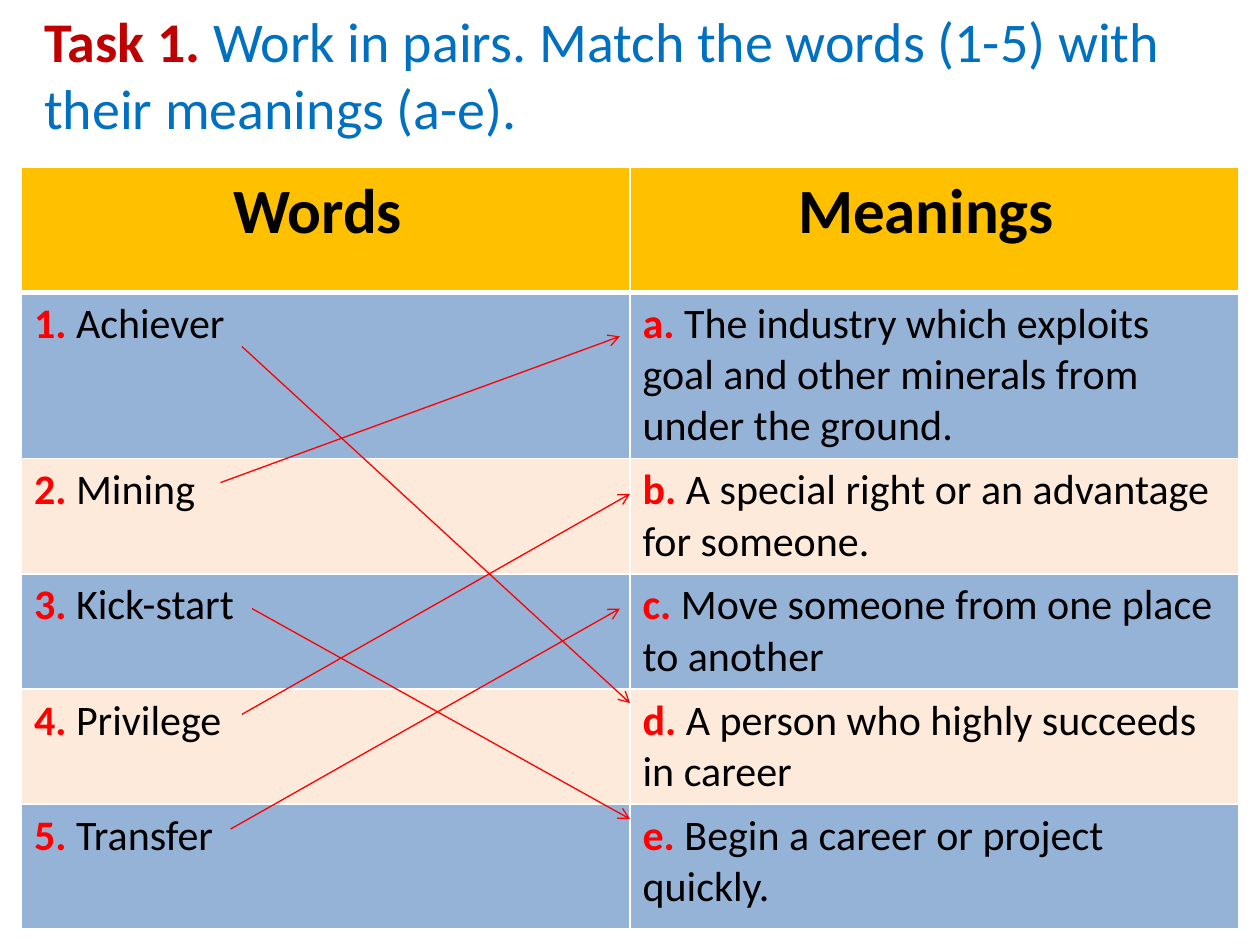
from lxml import etree
from pptx import Presentation
from pptx.dml.color import RGBColor
from pptx.enum.shapes import MSO_CONNECTOR
from pptx.enum.text import MSO_ANCHOR, MSO_AUTO_SIZE, PP_ALIGN
from pptx.oxml.ns import qn
from pptx.util import Inches, Pt

STRAIGHT = MSO_CONNECTOR.STRAIGHT
TOP = MSO_ANCHOR.TOP
NO_AUTOFIT = MSO_AUTO_SIZE.NONE
LEFT, CENTER = PP_ALIGN.LEFT, PP_ALIGN.CENTER

DARK_RED = RGBColor(0xC0, 0x00, 0x00)
BLUE = RGBColor(0x00, 0x70, 0xC0)
RED = RGBColor(0xFF, 0x00, 0x00)
BLACK = RGBColor(0x00, 0x00, 0x00)
WHITE = RGBColor(0xFF, 0xFF, 0xFF)
GOLD = RGBColor(0xFF, 0xC0, 0x00)
BAND_FILLS = (RGBColor(0x95, 0xB3, 0xD7), RGBColor(0xFD, 0xEA, 0xDA))

FONT = "Calibri"
HEADINGS = ("Words", "Meanings")
WORDS = ("Achiever", "Mining", "Kick-start", "Privilege", "Transfer")
MEANINGS = (
    "The industry which exploits goal and other minerals from under the ground.",
    "A special right or an advantage for someone.",
    "Move someone from one place to another",
    "A person who highly succeeds in career",
    "Begin a career or project quickly.",
)
ROW_HEIGHTS = (0.99, 1.3, 0.9, 0.9, 0.91, 0.99)
MATCHES = (
    ((1.75, 1.42), (4.83, 4.25)),
    ((1.58, 2.5), (4.75, 1.34)),
    ((1.83, 3.5), (4.83, 5.17)),
    ((1.75, 4.34), (4.83, 2.59)),
    ((1.66, 5.25), (4.75, 3.5)),
)


def add_span(para, text, color, size, bold=False):
    """Append a formatted run to a paragraph."""
    span = para.add_run()
    span.text = text
    formats = {"name": FONT, "size": Pt(size), "bold": bold}
    for name, value in formats.items():
        setattr(span.font, name, value)
    span.font.color.rgb = color


def add_heading(page, left, top, width, height):
    """Fill the title placeholder with the task instruction."""
    title = page.shapes.title
    box = {"left": left, "top": top, "width": width, "height": height}
    for name, value in box.items():
        setattr(title, name, Inches(value))
    frame = title.text_frame
    formats = {"word_wrap": True, "auto_size": NO_AUTOFIT, "vertical_anchor": TOP}
    for name, value in formats.items():
        setattr(frame, name, value)
    para = frame.paragraphs[0]
    para.alignment = LEFT
    add_span(para, "Task 1. ", DARK_RED, 32, True)
    add_span(para, "Work in pairs. Match the words (1-5) with their meanings (a-e).", BLUE, 32)


def style_cell(cell, fill, top_width, bottom_width):
    """Give a cell white borders and a solid fill."""
    properties = cell._tc.get_or_add_tcPr()
    widths = {"a:lnL": 1, "a:lnR": 1, "a:lnT": top_width, "a:lnB": bottom_width}
    for tag, width in widths.items():
        line = etree.SubElement(properties, qn(tag), w=str(Pt(width)))
        solid = etree.SubElement(line, qn("a:solidFill"))
        etree.SubElement(solid, qn("a:srgbClr"), val=str(WHITE))
    cell.fill.solid()
    cell.fill.fore_color.rgb = fill


def add_match_table(page, left, top, width, height):
    """Add the table of words and meanings."""
    frame = page.shapes.add_table(
        len(ROW_HEIGHTS), len(HEADINGS),
        Inches(left), Inches(top), Inches(width), Inches(height))
    table = frame.table
    for column in table.columns:
        column.width = Inches(width / len(HEADINGS))
    for row, row_height in zip(table.rows, ROW_HEIGHTS):
        row.height = Inches(row_height)
    for column, heading in enumerate(HEADINGS):
        cell = table.cell(0, column)
        style_cell(cell, GOLD, 1, 3)
        cell.margin_right = Inches(0.23)
        para = cell.text_frame.paragraphs[0]
        para.alignment = CENTER
        add_span(para, heading, BLACK, 36, True)
    for row, entries in enumerate(zip(WORDS, MEANINGS), start=1):
        labels = (f"{row}. ", f"{'abcde'[row - 1]}. ")
        for column, (label, entry) in enumerate(zip(labels, entries)):
            cell = table.cell(row, column)
            style_cell(cell, BAND_FILLS[(row - 1) % 2], 3 if row == 1 else 1, 1)
            para = cell.text_frame.paragraphs[0]
            add_span(para, label, RED, 24, True)
            add_span(para, entry, BLACK, 24)


def add_match_arrows(page, left, top):
    """Draw an arrow from each word to its meaning."""
    for (start_x, start_y), (end_x, end_y) in MATCHES:
        arrow = page.shapes.add_connector(
            STRAIGHT, Inches(left + start_x), Inches(top + start_y),
            Inches(left + end_x), Inches(top + end_y))
        arrow.line.color.rgb = RED
        arrow.line.width = Pt(0.75)
        etree.SubElement(arrow.line._get_or_add_ln(), qn("a:tailEnd"), type="arrow")
        etree.SubElement(arrow._element.spPr, qn("a:effectLst"))


def main():
    """Build and save the matching exercise."""
    deck = Presentation()
    deck.slide_width, deck.slide_height = Inches(10), Inches(7.5)
    page = deck.slides.add_slide(deck.slide_layouts[5])
    add_heading(page, 0.25, 0, 9.5, 1.18)
    add_match_table(page, 0.17, 1.33, 9.66, sum(ROW_HEIGHTS))
    add_match_arrows(page, 0.17, 1.33)
    deck.save("out.pptx")


if __name__ == "__main__":
    main()
